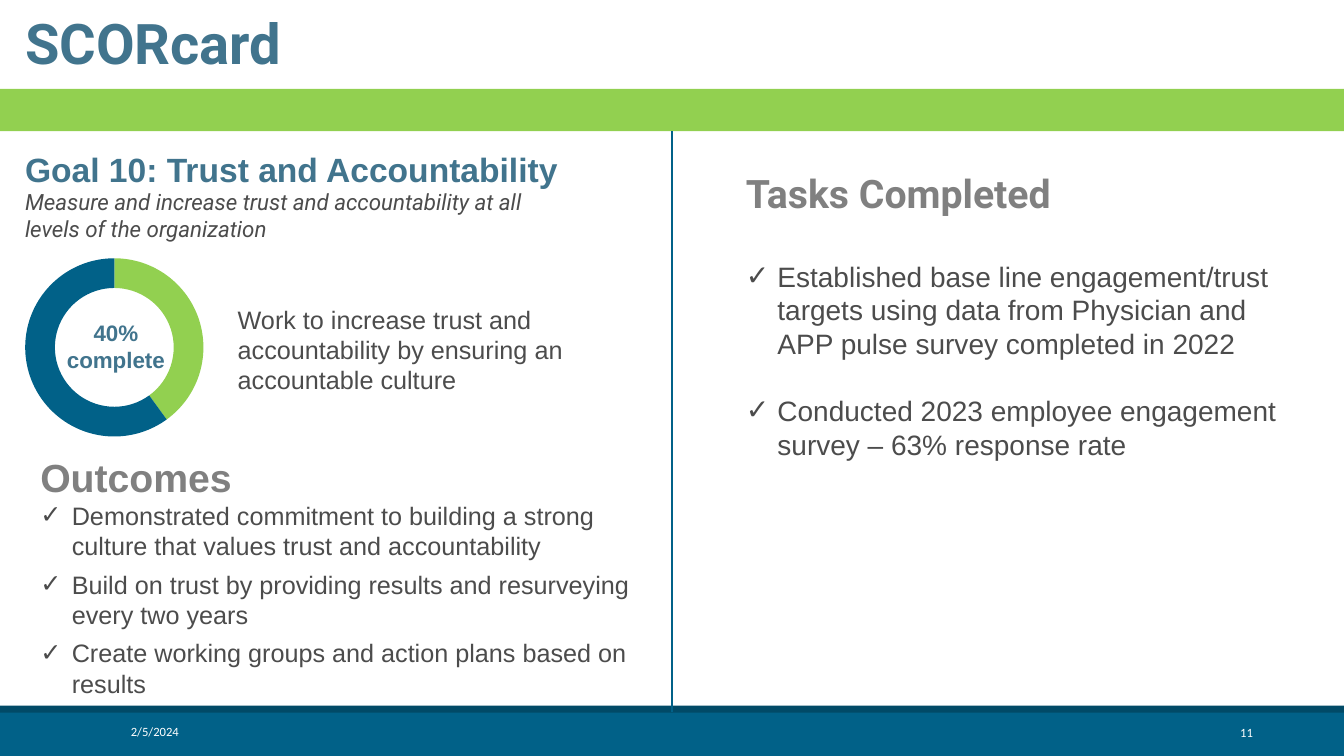
import pptx
import pptx.chart.data
import pptx.dml.color
import pptx.enum.chart
import pptx.enum.shapes
import pptx.enum.text
import pptx.oxml
import pptx.oxml.ns
import pptx.util
from lxml import etree

Pt = pptx.util.Pt
ALIGN = pptx.enum.text.PP_ALIGN
ANCHOR = pptx.enum.text.MSO_ANCHOR
COLORS = {
    "ocean": "016188",
    "navy": "014A67",
    "lime": "92D050",
    "steel": "41748D",
    "gray": "808080",
    "ink": "4C4C4C",
    "white": "FFFFFF",
}
FORMATS = {
    "title": ("steel", {"name": "Roboto", "size": Pt(40), "bold": True}),
    "goal": ("steel", {"name": "Arial", "size": Pt(24), "bold": True}),
    "motto": ("ink", {"name": "Roboto", "size": Pt(16), "italic": True}),
    "tasks heading": ("gray", {"name": "Roboto", "size": Pt(28), "bold": True}),
    "outcomes heading": ("gray", {"name": "Arial", "size": Pt(28), "bold": True}),
    "large": ("ink", {"name": "Arial", "size": Pt(20), "bold": False}),
    "medium": ("ink", {"name": "Arial", "size": Pt(18), "bold": False}),
    "progress": ("steel", {"name": "Arial", "size": Pt(16), "bold": True}),
    "footer": ("white", {"name": "Calibri", "size": Pt(9)}),
}


def rgb(color):
    return pptx.dml.color.RGBColor.from_string(COLORS[color])


def assign(target, values):
    for name, value in values.items():
        setattr(target, name, value)


class Page:
    def __init__(self, deck, layout):
        self.slide = deck.slides.add_slide(deck.slide_layouts[layout])
        self.shapes = self.slide.shapes

    def fill_text(self, box, lines, style, align=ALIGN.LEFT, anchor=ANCHOR.TOP,
                  bullet=None, before=0, after=0):
        color, font = FORMATS[style]
        frame = box.text_frame
        assign(frame, {
            "word_wrap": True,
            "auto_size": pptx.enum.text.MSO_AUTO_SIZE.NONE,
            "vertical_anchor": anchor,
            "margin_left": Pt(7.2), "margin_right": Pt(7.2),
            "margin_top": Pt(3.6), "margin_bottom": Pt(3.6),
        })
        for index, line in enumerate(lines):
            para = frame.add_paragraph() if index else frame.paragraphs[0]
            assign(para, {
                "alignment": align,
                "line_spacing": Pt(font["size"].pt * 1.2),
                "space_before": Pt(before if index else 0),
                "space_after": Pt(after),
            })
            self.mark(para, bullet)
            span = para.add_run()
            span.text = line
            assign(span.font, font)
            span.font.color.rgb = rgb(color)

    def mark(self, para, bullet):
        properties = para._p.get_or_add_pPr()
        indent = Pt(22.5) if bullet else 0
        properties.set("marL", str(indent))
        properties.set("indent", str(-indent))
        tag = pptx.oxml.ns.qn("a:buChar" if bullet else "a:buNone")
        element = etree.SubElement(properties, tag)
        if bullet:
            element.set("char", bullet)

    def placeholder(self, number, place, lines, style, **options):
        box = self.slide.placeholders[number]
        assign(box, dict(zip(("left", "top", "width", "height"), map(Pt, place))))
        self.fill_text(box, lines, style, **options)

    def text(self, place, lines, style, **options):
        self.fill_text(self.shapes.add_textbox(*map(Pt, place)), lines, style, **options)

    def bar(self, place, color):
        kind = pptx.enum.shapes.MSO_SHAPE.RECTANGLE
        box = self.shapes.add_shape(kind, *map(Pt, place))
        box.shadow.inherit = False
        box.fill.solid()
        box.fill.fore_color.rgb = rgb(color)
        box.line.fill.background()
        return box

    def divider(self, lower, upper, color):
        kind = pptx.enum.shapes.MSO_CONNECTOR.STRAIGHT
        line = self.shapes.add_connector(kind, 0, 0, 0, 0)
        line.begin_connect(lower, 0)
        line.end_connect(upper, 2)
        line.line.width = Pt(1)
        line.line.color.rgb = rgb(color)
        etree.SubElement(line._element.spPr, pptx.oxml.ns.qn("a:effectLst"))

    def doughnut(self, place, series, colors, area):
        data = pptx.chart.data.CategoryChartData()
        data.categories = ["1", "2", "3", "4"]
        for name, values in series.items():
            data.add_series(name, values)
        kind = pptx.enum.chart.XL_CHART_TYPE.DOUGHNUT
        chart = self.shapes.add_chart(kind, *map(Pt, place), data).chart
        assign(chart, {"has_legend": False, "has_title": False})
        assign(chart.font, {"name": "Calibri", "size": Pt(10)})
        chart.font.color.rgb = rgb("ink")
        plot = chart.plots[0]
        plot.vary_by_categories = True
        for ring in plot.series:
            for index, color in enumerate(colors):
                style = ring.points[index].format
                style.fill.solid()
                style.fill.fore_color.rgb = rgb(color)
                style.line.fill.background()
        self.arrange(chart, area)

    def arrange(self, chart, area):
        qn = pptx.oxml.ns.qn
        plot_area = chart._chartSpace.find(".//" + qn("c:plotArea"))
        for old in plot_area.findall(qn("c:layout")):
            plot_area.remove(old)
        layout = etree.Element(qn("c:layout"))
        plot_area.insert(0, layout)
        manual = etree.SubElement(layout, qn("c:manualLayout"))
        values = {"layoutTarget": "inner", "xMode": "edge", "yMode": "edge"}
        values.update(zip("xywh", area))
        for name, value in values.items():
            etree.SubElement(manual, qn("c:" + name)).set("val", str(value))


def main():
    deck = pptx.Presentation()
    assign(deck, {"slide_width": Pt(960), "slide_height": Pt(540)})
    page = Page(deck, 4)

    footer = page.bar((0, 508.3, 960, 31.7), "ocean")
    page.bar((0, 504, 960, 5), "navy")
    band = page.bar((0, 63.4, 960, 30.2), "lime")
    page.divider(footer, band, "ocean")

    page.placeholder(0, (10.8, 2.2, 200, 55.4), ["SCORcard"], "title")
    page.text((10.8, 103, 448.6, 36), ["Goal 10: Trust and Accountability"], "goal")
    page.text((10.8, 131, 410.4, 46), [
        "Measure and increase trust and accountability at all levels of the organization",
    ], "motto")

    page.doughnut(
        (18, 168.5, 144.7, 147.6),
        {"Series 1": (0, 0, None, None), "Series 2": (40, 60, None, None)},
        ("lime", "ocean", "ocean", "ocean"),
        (0, 0.11, 0.88, 0.92),
    )
    page.text((36, 224, 93.6, 46), ["40%", "complete"], "progress",
              align=ALIGN.CENTER, anchor=ANCHOR.MIDDLE)
    page.text((162.7, 213.8, 296.6, 72.7), [
        "Work to increase trust and accountability by ensuring an accountable culture",
    ], "medium")

    page.placeholder(1, (21.6, 320.4, 373, 41), ["Outcomes"], "outcomes heading")
    page.placeholder(2, (21.6, 353.5, 448.6, 150.5), [
        "Demonstrated commitment to building a strong culture that values trust and accountability",
        "Build on trust by providing results and resurveying every two years",
        "Create working groups and action plans based on results",
    ], "medium", bullet="✓", after=6)
    page.placeholder(3, (525.6, 117.4, 300.2, 41), ["Tasks Completed"], "tasks heading")
    page.placeholder(4, (525.6, 181.4, 411.8, 152.6), [
        "Established base line engagement/trust targets using data from Physician and "
        "APP pulse survey completed in 2022",
        "Conducted 2023 employee engagement survey – 63% response rate",
    ], "large", bullet="✓", before=24)

    page.text((86.4, 508.3, 194.4, 28.8), ["2/5/2024"], "footer", anchor=ANCHOR.MIDDLE)
    page.text((757.4, 514, 144.7, 18), ["11"], "footer",
              align=ALIGN.RIGHT, anchor=ANCHOR.MIDDLE)
    deck.save("out.pptx")


if __name__ == "__main__":
    main()
